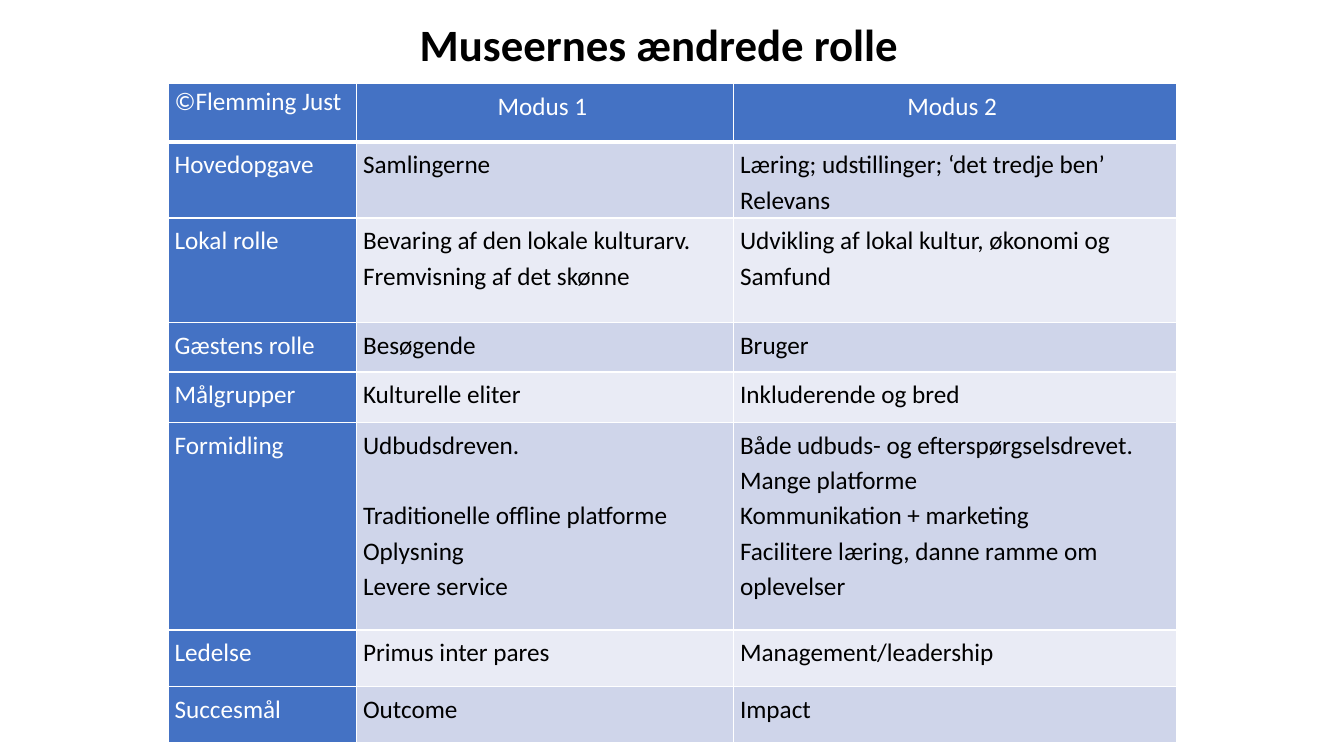
from dataclasses import dataclass
from typing import Any, Optional

from lxml import etree
from pptx import Presentation
from pptx.dml.color import RGBColor
from pptx.enum.text import MSO_ANCHOR, PP_ALIGN
from pptx.oxml.ns import qn
from pptx.util import Cm, Pt

LEFT, CENTER = PP_ALIGN.LEFT, PP_ALIGN.CENTER
MIDDLE = MSO_ANCHOR.MIDDLE


@dataclass(frozen=True)
class Theme:
    font: str = "Calibri"
    black: str = "000000"
    white: str = "FFFFFF"
    blue: str = "4472C4"
    bands: tuple[str, str] = ("E9EBF5", "CFD5EA")
    title: float = 32
    body: float = 18
    thin: float = 1
    thick: float = 3
    gap: float = 25.3


@dataclass(frozen=True)
class Row:
    height: float
    cells: tuple[str, str, str]
    gap: Optional[tuple[int, int]] = None


THEME = Theme()
WIDTHS = (4.75, 9.5, 11.15)
ROWS = (
    Row(1.47, ("©Flemming Just", "Modus 1 ", "Modus 2 ")),
    Row(1.78, ("Hovedopgave", "Samlingerne",
               "Læring; udstillinger; ‘det tredje ben’\nRelevans")),
    Row(2.64, ("Lokal rolle",
               "Bevaring af den lokale kulturarv.\nFremvisning af det skønne",
               "Udvikling af lokal kultur, økonomi og Samfund")),
    Row(1.24, ("Gæstens rolle", "Besøgende", "Bruger")),
    Row(1.27, ("Målgrupper", "Kulturelle eliter", "Inkluderende og bred")),
    Row(5.23, ("Formidling",
               "Udbudsdreven.\nTraditionelle offline platforme\n"
               "Oplysning\nLevere service",
               "Både udbuds- og efterspørgselsdrevet.\nMange platforme\n"
               "Kommunikation + marketing\n"
               "Facilitere læring, danne ramme om oplevelser"), gap=(1, 1)),
    Row(1.42, ("Ledelse", "Primus inter pares", "Management/leadership")),
    Row(1.42, ("Succesmål", "Outcome", "Impact")),
)
INSETS = {"margin_left": Cm(0.16), "margin_right": Cm(0.16),
          "margin_top": Cm(0.08), "margin_bottom": Cm(0.08)}


def apply(target: Any, values: dict[str, Any]) -> None:
    for name, value in values.items():
        setattr(target, name, value)


def write(frame: Any, text: str, size: float, color: str, bold: bool,
          layout: dict[str, Any]) -> None:
    frame.text = text
    for line in frame.paragraphs:
        apply(line, layout)
        for run in line.runs:
            apply(run.font, {"name": THEME.font, "size": Pt(size), "bold": bold})
            run.font.color.rgb = RGBColor.from_string(color)


def border(cell: Any, side: str, width: float) -> None:
    props = cell._tc.get_or_add_tcPr()
    edge = etree.SubElement(props, qn(f"a:ln{side}"), w=str(Pt(width)))
    fill = etree.SubElement(edge, qn("a:solidFill"))
    etree.SubElement(fill, qn("a:srgbClr"), val=THEME.white)


def draw_title(slide: Any) -> None:
    frame = slide.shapes.add_textbox(
        Cm(6.55), Cm(0.28), Cm(20.12), Cm(1.83)).text_frame
    apply(frame, {"word_wrap": True, "vertical_anchor": MIDDLE})
    write(frame, "Museernes ændrede rolle", THEME.title, THEME.black, True,
          {"alignment": CENTER, "line_spacing": 0.9})


def draw_cell(cell: Any, row: int, col: int) -> None:
    item = ROWS[row]
    head = row == 0 or col == 0
    apply(cell, INSETS)
    for side in "LRTB":
        heavy = (row, side) in ((0, "B"), (1, "T"))
        border(cell, side, THEME.thick if heavy else THEME.thin)
    cell.fill.solid()
    cell.fill.fore_color.rgb = RGBColor.from_string(
        THEME.blue if head else THEME.bands[row % 2])
    write(cell.text_frame, item.cells[col], THEME.body,
          THEME.white if head else THEME.black, False,
          {"alignment": CENTER if row == 0 and col else LEFT,
           "line_spacing": 1.15 if row or col else 1.0})
    if item.gap and item.gap[0] == col:
        cell.text_frame.paragraphs[item.gap[1]].space_before = Pt(THEME.gap)


def draw_table(slide: Any) -> None:
    table = slide.shapes.add_table(
        len(ROWS), len(WIDTHS), Cm(4.24), Cm(2.11), Cm(sum(WIDTHS)),
        Cm(sum(row.height for row in ROWS))).table
    apply(table, {"first_row": False, "horz_banding": False})
    for col, width in enumerate(WIDTHS):
        table.columns[col].width = Cm(width)
    for row, item in enumerate(ROWS):
        table.rows[row].height = Cm(item.height)
        for col in range(len(WIDTHS)):
            draw_cell(table.cell(row, col), row, col)


def main() -> None:
    deck = Presentation()
    apply(deck, {"slide_width": Cm(33.87), "slide_height": Cm(19.05)})
    slide = deck.slides.add_slide(deck.slide_layouts[6])
    draw_title(slide)
    draw_table(slide)
    deck.save("out.pptx")


if __name__ == "__main__":
    main()
